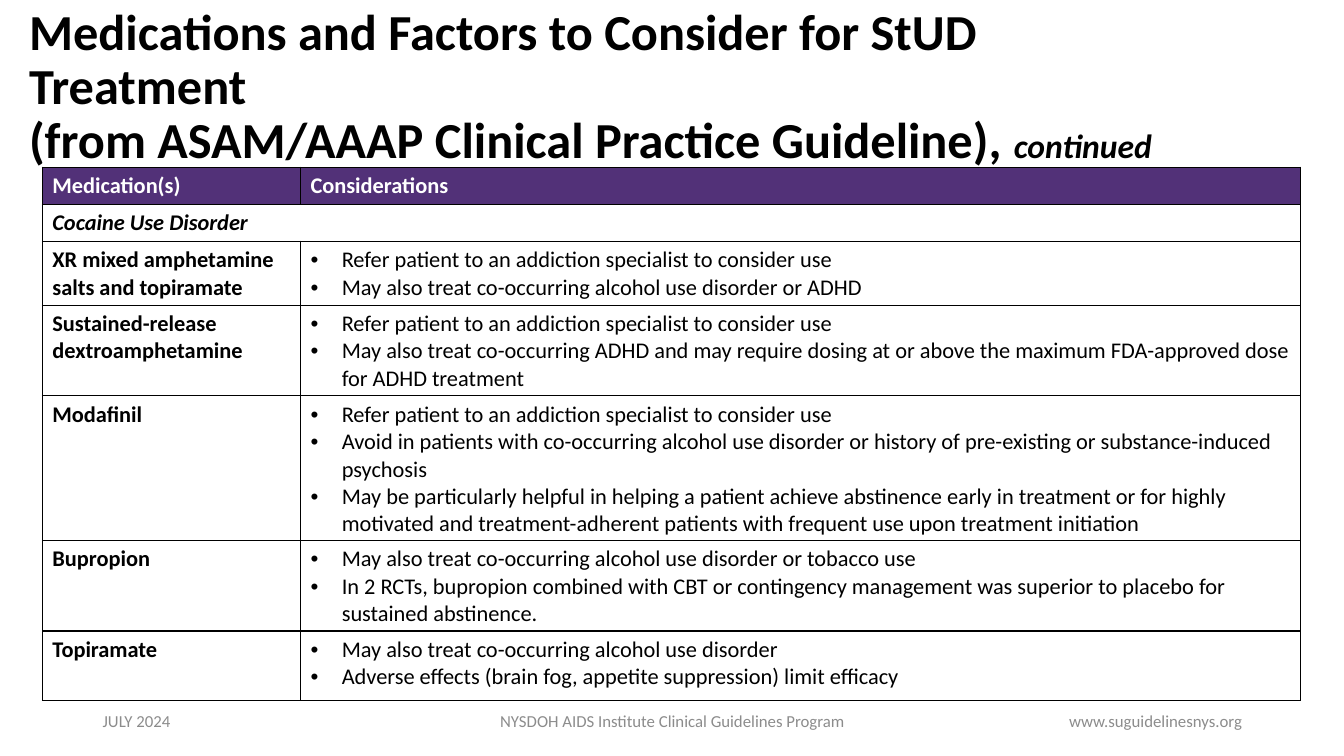
from dataclasses import dataclass

from lxml.etree import SubElement
from pptx import Presentation
from pptx.dml.color import RGBColor
from pptx.enum.text import MSO_ANCHOR, PP_ALIGN
from pptx.oxml import parse_xml
from pptx.oxml.ns import nsdecls, qn
from pptx.util import Inches, Pt


@dataclass(frozen=True)
class Theme:
    font: str = "Calibri"
    ink: RGBColor = RGBColor(0x00, 0x00, 0x00)
    paper: RGBColor = RGBColor(0xFF, 0xFF, 0xFF)
    purple: RGBColor = RGBColor(0x52, 0x31, 0x78)
    grey: RGBColor = RGBColor(0x8C, 0x8C, 0x8C)
    title_size: Pt = Pt(36)
    continued_size: Pt = Pt(24)
    table_size: Pt = Pt(16)
    footer_size: Pt = Pt(12)


theme = Theme()


def style(font, size, color, bold=False, italic=False):
    font.name, font.size, font.bold, font.italic = theme.font, size, bold, italic
    font.color.rgb = color


def add_text_frame(left, top, width, height):
    box = slide.shapes.add_textbox(Inches(left), Inches(top), Inches(width), Inches(height))
    box.text_frame.word_wrap = True
    box.text_frame.vertical_anchor = MSO_ANCHOR.MIDDLE
    return box.text_frame


presentation = Presentation()
presentation.slide_width, presentation.slide_height = Inches(13.33), Inches(7.5)
slide = presentation.slides.add_slide(presentation.slide_layouts[6])

# Title
title = add_text_frame(0.19, 0.15, 11.5, 1.45).paragraphs[0]
title.line_spacing = 0.9
heading = title.add_run()
heading.text = "Medications and Factors to Consider for StUD Treatment"
title.add_line_break()
guideline = title.add_run()
guideline.text = "(from ASAM/AAAP Clinical Practice Guideline), "
continued = title.add_run()
continued.text = "continued"
for run in (heading, guideline):
    style(run.font, theme.title_size, theme.ink, bold=True)
style(continued.font, theme.continued_size, theme.ink, bold=True, italic=True)

# Table content: row height, medication, considerations
SPECIALIST = "Refer patient to an addiction specialist to consider use"
rows = [
    (0.36, "Medication(s)", ["Considerations"]),
    (0.36, "Cocaine Use Disorder", []),
    (0.62, "XR mixed amphetamine salts and topiramate", [
        SPECIALIST,
        "May also treat co-occurring alcohol use disorder or ADHD"]),
    (0.88, "Sustained-release dextroamphetamine", [
        SPECIALIST,
        "May also treat co-occurring ADHD and may require dosing at or above the maximum "
        "FDA-approved dose for ADHD treatment"]),
    (1.4, "Modafinil", [
        SPECIALIST,
        "Avoid in patients with co-occurring alcohol use disorder or history of pre-existing "
        "or substance-induced psychosis",
        "May be particularly helpful in helping a patient achieve abstinence early in treatment "
        "or for highly motivated and treatment-adherent patients with frequent use upon "
        "treatment initiation"]),
    (0.88, "Bupropion", [
        "May also treat co-occurring alcohol use disorder or tobacco use",
        "In 2 RCTs, bupropion combined with CBT or contingency management was superior to "
        "placebo for sustained abstinence."]),
    (0.69, "Topiramate", [
        "May also treat co-occurring alcohol use disorder",
        "Adverse effects (brain fog, appetite suppression) limit efficacy"]),
]
HEADER, SECTION = 0, 1

# Table
medications = slide.shapes.add_table(
    len(rows), 2, Inches(0.42), Inches(1.66), Inches(12.49), Inches(5.29)).table
medications.horz_banding = False
for column, width in zip(medications.columns, (2.56, 9.92)):
    column.width = Inches(width)
medications.cell(SECTION, 0).merge(medications.cell(SECTION, 1))

for row, (height, medication, considerations) in enumerate(rows):
    medications.rows[row].height = Inches(height)
    for col, lines in enumerate(([medication], considerations)):
        cell = medications.cell(row, col)
        for side in ("lnL", "lnR", "lnT", "lnB"):
            cell._tc.get_or_add_tcPr().append(parse_xml(
                f'<a:{side} {nsdecls("a")} w="{Pt(1)}"><a:solidFill>'
                f'<a:srgbClr val="{theme.ink}"/></a:solidFill></a:{side}>'))
        cell.fill.solid()
        cell.fill.fore_color.rgb = theme.purple if row == HEADER else theme.paper
        cell.text_frame.text = "\n".join(lines)
        for paragraph in cell.text_frame.paragraphs:
            if col == 1 and row > SECTION:
                properties = paragraph._p.get_or_add_pPr()
                properties.set("marL", str(Inches(0.31)))
                properties.set("indent", str(-Inches(0.31)))
                SubElement(properties, qn("a:buFont"), typeface="Arial")
                SubElement(properties, qn("a:buChar"), char="•")
            style(paragraph.font, theme.table_size,
                  theme.paper if row == HEADER else theme.ink,
                  bold=col == 0 or row == HEADER, italic=row == SECTION)

# Footer
for left, width, text, alignment in (
    (0.92, 3, "JULY 2024", PP_ALIGN.LEFT),
    (4.42, 4.5, "NYSDOH AIDS Institute Clinical Guidelines Program", PP_ALIGN.CENTER),
    (9.42, 3, "www.suguidelinesnys.org", PP_ALIGN.RIGHT),
):
    footer = add_text_frame(left, 6.95, width, 0.4).paragraphs[0]
    footer.text = text
    footer.alignment = alignment
    style(footer.font, theme.footer_size, theme.grey)

presentation.save("out.pptx")
